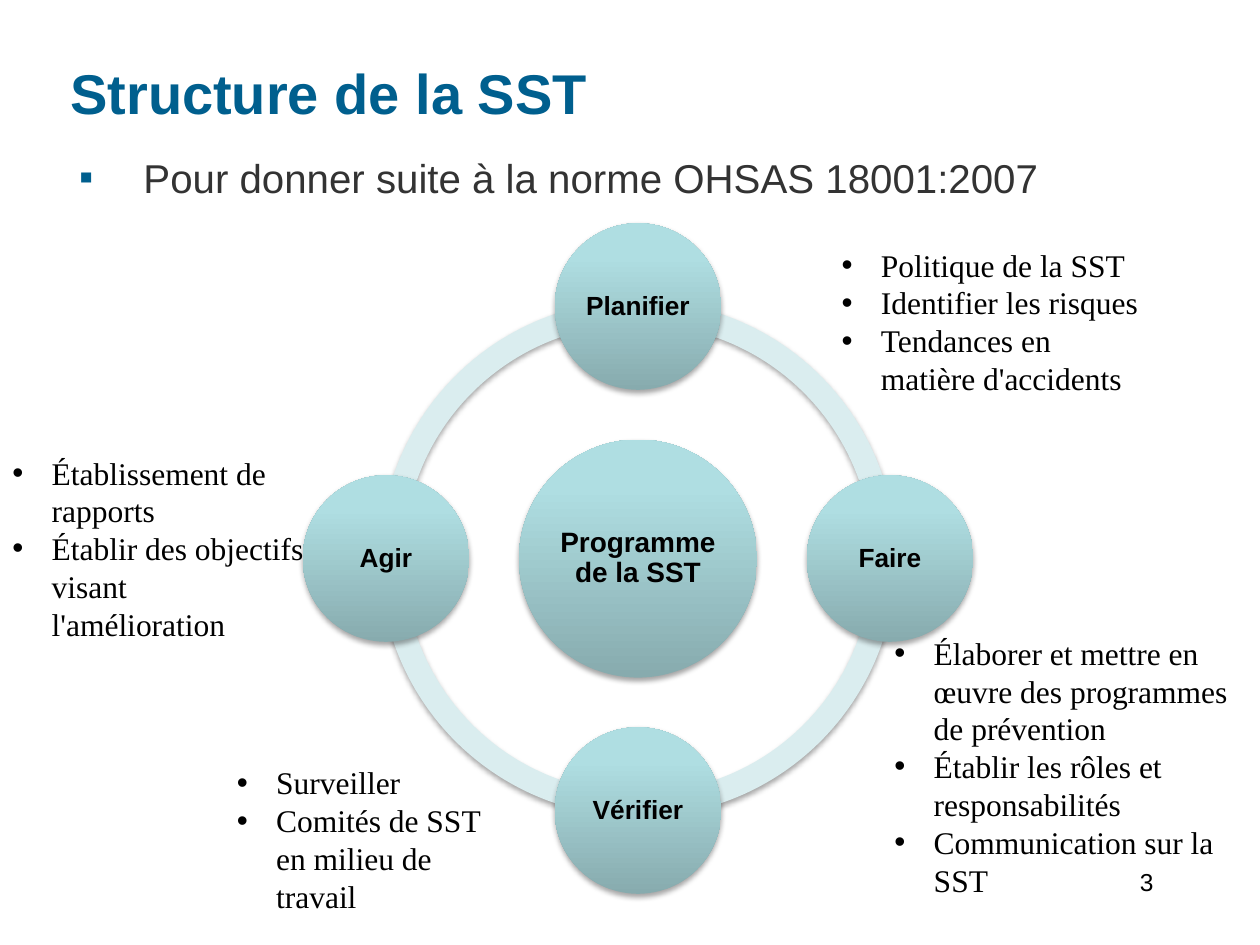
from math import cos, radians, sin

from lxml import etree
from pptx import Presentation
from pptx.dml.color import RGBColor
from pptx.enum import shapes, text
from pptx.oxml import parse_xml
from pptx.oxml.ns import nsdecls, qn
from pptx.util import Pt

TITLE_BLUE = RGBColor(0x00, 0x5F, 0x8E)
BODY_GREY = RGBColor(0x33, 0x33, 0x33)
BLACK = RGBColor(0x00, 0x00, 0x00)
RING_TEAL = RGBColor(0xDA, 0xED, 0xEF)
NODE_GRADIENT = [(0, RGBColor(0x87, 0xAB, 0xAE)),
                 (80, RGBColor(0xAF, 0xDE, 0xE2)),
                 (100, RGBColor(0xAF, 0xE0, 0xE4))]

CENTER_X, CENTER_Y = 364.6, 319.2
ORBIT = 144
RING_SIZE, HUB_SIZE, NODE_SIZE = 295.2, 136, 95.2
QUARTER = 54  # 90 degrees in block-arc adjustment units
LIST_INDENT = 22.5

# Steps clockwise from the top: angle in degrees, label
STEPS = [(-90, "Planifier"), (0, "Faire"), (90, "Vérifier"), (180, "Agir")]

# Box (left, top, width, height), then (bulleted, wording) items
STEP_LISTS = [
    ((473.8, 136.8, 184, 94.3), [
        (True, "Politique de la SST"),
        (True, "Identifier les risques"),
        (True, "Tendances en matière d'accidents")]),
    ((128.2, 432.7, 167, 94.3), [
        (True, "Surveiller"),
        (True, "Comités de SST"),
        (False, "en milieu de travail")]),
    ((504, 358.6, 216, 159.8), [
        (True, "Élaborer et mettre en œuvre des programmes de prévention"),
        (True, "Établir les rôles et responsabilités"),
        (True, "Communication sur la SST")]),
    ((0, 255.6, 187.2, 116.6), [
        (True, "Établissement de rapports"),
        (True, "Établir des objectifs visant"),
        (False, "l'amélioration")]),
]


def style_paragraph(paragraph, size, color, font="Arial", bold=False):
    for run in paragraph.runs:
        run.font.name = font
        run.font.size = Pt(size)
        run.font.color.rgb = color
        run.font.bold = bold


def set_bullet(paragraph, indent, char=None, color=None):
    """Indent a paragraph, hanging when it has a bullet."""
    props = paragraph._p.get_or_add_pPr()
    props.set("marL", str(int(Pt(indent))))
    props.set("indent", str(-int(Pt(indent)) if char else 0))
    if not char:
        etree.SubElement(props, qn("a:buNone"))
        return
    if color is not None:
        bullet_color = etree.SubElement(props, qn("a:buClr"))
        etree.SubElement(bullet_color, qn("a:srgbClr"), val=str(color))
    etree.SubElement(props, qn("a:buFont"), typeface="Arial")
    etree.SubElement(props, qn("a:buChar"), char=char)


def add_text(slide, box, wording):
    frame = slide.shapes.add_textbox(*map(Pt, box)).text_frame
    frame.word_wrap = True
    frame.text = wording
    return frame


def add_list(slide, box, items):
    frame = add_text(slide, box, "\n".join(wording for _, wording in items))
    for paragraph, (bulleted, _) in zip(frame.paragraphs, items):
        set_bullet(paragraph, LIST_INDENT, "•" if bulleted else None)
        style_paragraph(paragraph, 18, BLACK, "Times New Roman")


def add_centered(slide, preset, x, y, size):
    return slide.shapes.add_shape(preset, Pt(x - size / 2), Pt(y - size / 2),
                                  Pt(size), Pt(size))


def soften(shape):
    """Remove the outline and give the shape a soft shadow below it."""
    shape.line.fill.background()
    shape.shadow.inherit = False
    effects = shape._element.spPr.find(qn("a:effectLst"))
    effects.append(parse_xml(
        f'<a:outerShdw {nsdecls("a")} blurRad="{int(Pt(3.1))}" '
        f'dist="{int(Pt(1.8))}" dir="5400000" rotWithShape="0">'
        '<a:srgbClr val="000000"><a:alpha val="35000"/></a:srgbClr>'
        '</a:outerShdw>'))


def fill_gradient(shape):
    """Three-stop gradient running from bottom to top."""
    shape.fill.background()
    props = shape._element.spPr
    stops = "".join(
        f'<a:gs pos="{pos * 1000}"><a:srgbClr val="{color}"/></a:gs>'
        for pos, color in NODE_GRADIENT)
    props.replace(props.find(qn("a:noFill")), parse_xml(
        f'<a:gradFill {nsdecls("a")} rotWithShape="1"><a:gsLst>{stops}'
        '</a:gsLst><a:lin ang="16200000" scaled="0"/></a:gradFill>'))


def add_ring(slide):
    for quarter in range(4):
        arc = add_centered(slide, shapes.MSO_SHAPE.BLOCK_ARC,
                           CENTER_X, CENTER_Y, RING_SIZE)
        arc.adjustments[0] = quarter * QUARTER
        arc.adjustments[1] = (quarter + 1) % 4 * QUARTER
        arc.adjustments[2] = 0.046
        arc.fill.solid()
        arc.fill.fore_color.rgb = RING_TEAL
        soften(arc)


def add_node(slide, x, y, size, label, font_size):
    node = add_centered(slide, shapes.MSO_SHAPE.OVAL, x, y, size)
    fill_gradient(node)
    soften(node)
    frame = node.text_frame
    frame.word_wrap = True
    frame.vertical_anchor = text.MSO_ANCHOR.MIDDLE
    frame.margin_left = frame.margin_right = Pt(1.5)
    frame.margin_top = frame.margin_bottom = Pt(1.5)
    frame.text = label
    caption = frame.paragraphs[0]
    caption.alignment = text.PP_ALIGN.CENTER
    caption.line_spacing = 0.9
    style_paragraph(caption, font_size, BLACK, bold=True)


def main():
    deck = Presentation()
    deck.slide_width, deck.slide_height = Pt(720), Pt(540)
    slide = deck.slides.add_slide(deck.slide_layouts[6])

    # Slide number
    number = add_text(slide, (516.2, 491.8, 150, 36), "3").paragraphs[0]
    number.alignment = text.PP_ALIGN.RIGHT
    style_paragraph(number, 14, BLACK)

    # Title
    title = add_text(slide, (33.1, 10, 648, 90), "Structure de la SST")
    title.vertical_anchor = text.MSO_ANCHOR.MIDDLE
    title.paragraphs[0].line_spacing = 0.9
    style_paragraph(title.paragraphs[0], 32, TITLE_BLUE, bold=True)

    # Introductory line
    intro = add_text(slide, (38.2, 89.3, 576, 47.5),
                     "Pour donner suite à la norme OHSAS 18001:2007").paragraphs[0]
    set_bullet(intro, 36.7, "▪", TITLE_BLUE)
    intro.line_spacing = 0.8
    style_paragraph(intro, 23, BODY_GREY)

    # Details of each step
    for box, items in STEP_LISTS:
        add_list(slide, box, items)

    # Cycle: ring, hub and steps
    add_ring(slide)
    add_node(slide, CENTER_X, CENTER_Y, HUB_SIZE, "Programme de la SST", 16)
    for angle, label in STEPS:
        add_node(slide, CENTER_X + ORBIT * cos(radians(angle)),
                 CENTER_Y + ORBIT * sin(radians(angle)), NODE_SIZE, label, 15)

    deck.save("out.pptx")


if __name__ == "__main__":
    main()
